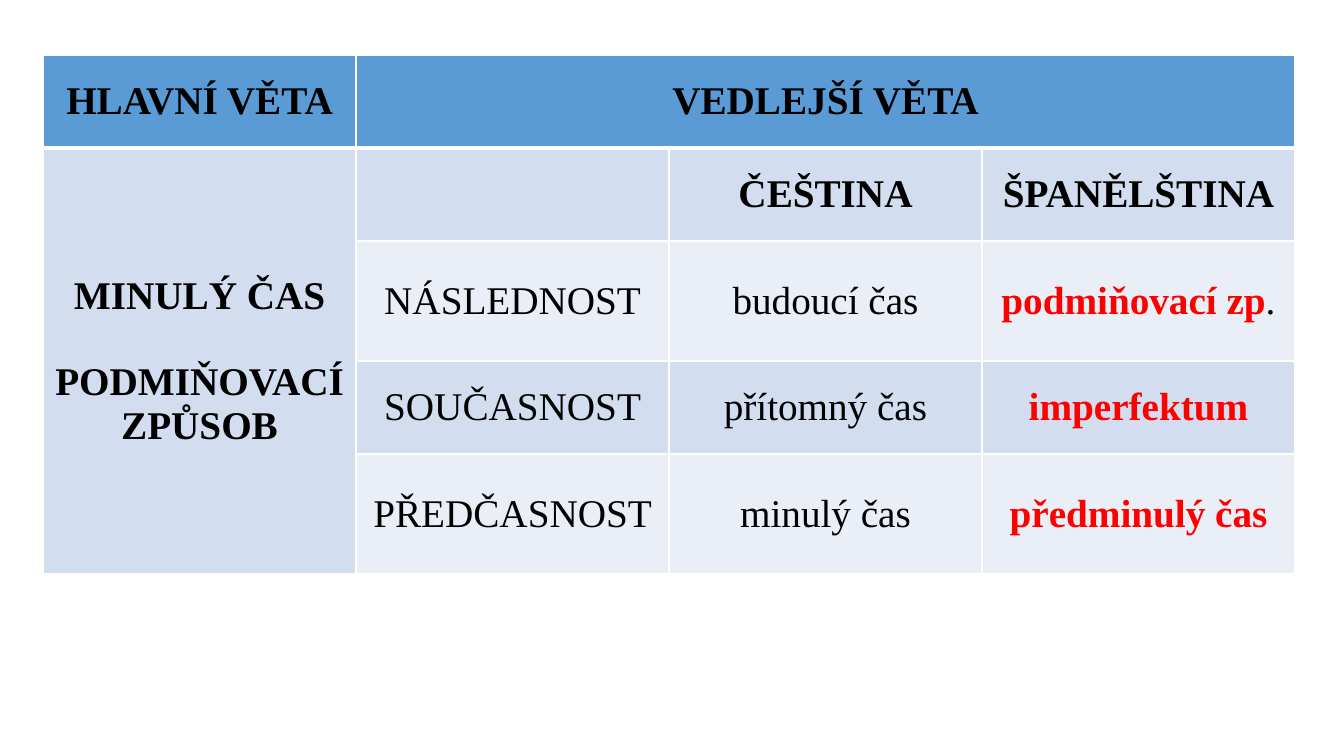
from dataclasses import dataclass

from lxml import etree
from pptx import Presentation
from pptx.dml.color import RGBColor
from pptx.enum.text import MSO_ANCHOR, PP_ALIGN
from pptx.oxml.ns import qn
from pptx.util import Pt

MIDDLE = MSO_ANCHOR.MIDDLE
CENTER = PP_ALIGN.CENTER
EMU_PER_PX = 12192000 / 1344


def px(length):
    """Turn whole pixels into EMU."""
    return round(length * EMU_PER_PX)


@dataclass(frozen=True)
class Theme:
    """Colours, font and sizes of the slide."""
    font: str = "Times New Roman"
    size: int = 28
    paragraph_gap: int = 31
    text: str = "000000"
    accent: str = "FF0000"
    header: str = "5B9BD5"
    bands: tuple = ("D2DEEF", "EAEFF7")
    border: str = "FFFFFF"
    thin: int = 1
    thick: int = 3


class SlideBuilder:
    """Draws styled elements on the current slide."""

    def __init__(self, page, theme):
        """Keep the slide and its theme."""
        self.page = page
        self.theme = theme

    def style(self, font, bold, color):
        """Apply the theme font with a weight and colour."""
        font.name = self.theme.font
        font.size = Pt(self.theme.size)
        font.bold = bold
        font.color.rgb = RGBColor.from_string(color)

    def border(self, cell, widths):
        """Outline a cell; widths are left, right, top and bottom."""
        properties = cell._tc.get_or_add_tcPr()
        for place, (side, width) in enumerate(zip("LRTB", widths)):
            line = etree.Element(qn(f"a:ln{side}"), w=str(Pt(width)))
            fill = etree.SubElement(line, qn("a:solidFill"))
            etree.SubElement(fill, qn("a:srgbClr"), val=self.theme.border)
            properties.insert(place, line)

    def add_text(self, cell, text, bold, color):
        """Fill a cell with centred paragraphs, one per line of text."""
        cell.vertical_anchor = MIDDLE
        for index, line in enumerate(text.split("\n")):
            frame = cell.text_frame
            para = frame.add_paragraph() if index else frame.paragraphs[0]
            para.text = line
            para.alignment = CENTER
            if index:
                para.space_before = Pt(self.theme.paragraph_gap)
            self.style(para.font, bold, color)

    def add_span(self, cell, text, bold, color):
        """Append a differently styled run to the last paragraph of a cell."""
        span = cell.text_frame.paragraphs[-1].add_run()
        span.text = text
        self.style(span.font, bold, color)

    def add_table(self, left, top, column_width, row_heights, rows, merges):
        """Add a banded table with a header row and merged cells."""
        theme = self.theme
        column_count = len(rows[0])
        grid = self.page.shapes.add_table(
            len(rows), column_count, px(left), px(top),
            px(column_width * column_count), px(sum(row_heights))).table
        grid.first_row = grid.horz_banding = False
        for column in grid.columns:
            column.width = px(column_width)
        for r, (height, texts) in enumerate(zip(row_heights, rows)):
            grid.rows[r].height = px(height)
            for c, text in enumerate(texts):
                cell = grid.cell(r, c)
                band = theme.bands[(r - 1) % 2] if r and c else theme.bands[0]
                cell.fill.solid()
                cell.fill.fore_color.rgb = RGBColor.from_string(band if r else theme.header)
                self.border(cell, (theme.thin, theme.thin,
                                   theme.thick if r == 1 else theme.thin,
                                   theme.thick if r == 0 else theme.thin))
                if text:
                    accented = r > 1 and c == column_count - 1
                    bold = r < 2 or c == 0 or accented
                    self.add_text(cell, text, bold, theme.accent if accented else theme.text)
        for first, last in merges:
            grid.cell(*first).merge(grid.cell(*last))
        return grid


def main():
    """Build the table of tenses and save the deck."""
    deck = Presentation()
    deck.slide_width, deck.slide_height = px(1344), px(756)
    theme = Theme()
    builder = SlideBuilder(deck.slides.add_slide(deck.slide_layouts[6]), theme)
    rows = [
        ("HLAVNÍ VĚTA", "VEDLEJŠÍ VĚTA", "", ""),
        ("MINULÝ ČAS\nPODMIŇOVACÍ ZPŮSOB", "", "ČEŠTINA", "ŠPANĚLŠTINA"),
        ("", "NÁSLEDNOST", "budoucí čas", "podmiňovací zp"),
        ("", "SOUČASNOST", "přítomný čas", "imperfektum"),
        ("", "PŘEDČASNOST", "minulý čas", "předminulý čas"),
    ]
    tenses = builder.add_table(43, 55, 313, (93, 93, 120, 93, 120), rows,
                               [((0, 1), (0, 3)), ((1, 0), (4, 0))])
    builder.add_span(tenses.cell(2, 3), ".", False, theme.text)
    deck.save("out.pptx")


if __name__ == "__main__":
    main()
